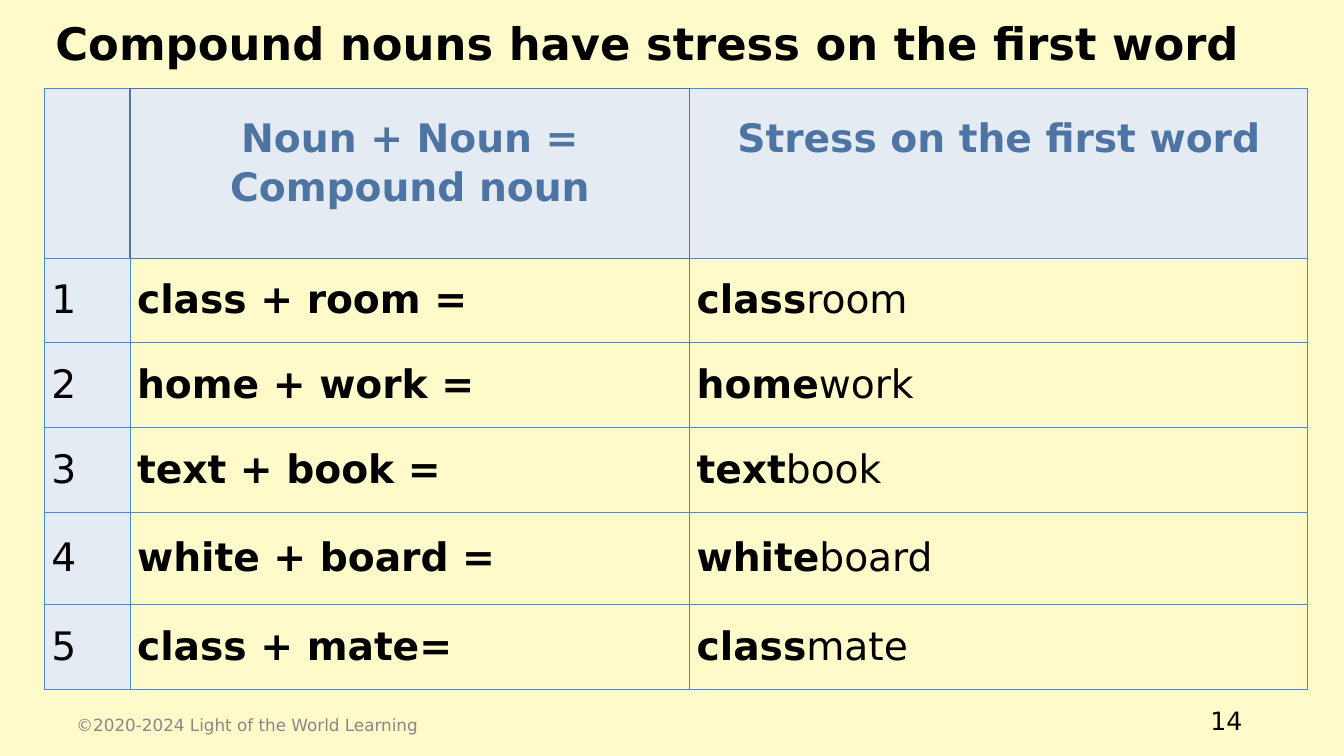
from dataclasses import dataclass

from lxml.etree import SubElement
from pptx import Presentation
from pptx.dml.color import RGBColor as Rgb
from pptx.enum.text import MSO_ANCHOR as Anchor, PP_ALIGN as Align
from pptx.oxml.ns import qn
from pptx.util import Emu, Pt

PX = 9144  # 100 px to the inch


@dataclass(frozen=True)
class Theme:
    font: str = "DejaVu Sans"
    paper: str = "FEFAC9"
    tint: str = "E4EBF2"
    ink: str = "000000"
    head: str = "4E74A3"
    line: str = "4A86E8"
    grey: str = "888888"
    title: int = 32
    body: int = 28
    page: int = 18
    foot: int = 12


class Deck:
    def __init__(self, theme, wide, high):
        self.theme = theme
        self.file = Presentation()
        self.file.slide_width, self.file.slide_height = Emu(wide * PX), Emu(high * PX)
        self.slide = self.file.slides.add_slide(self.file.slide_layouts[5])
        fill = self.slide.background.fill
        fill.solid()
        fill.fore_color.rgb = Rgb.from_string(theme.paper)

    def style(self, part, size, color, bold=False):
        """Format a run or a whole paragraph."""
        font = part.font
        font.name, font.size, font.bold = self.theme.font, Pt(size), bold
        font.color.rgb = Rgb.from_string(color)

    def fill_text(self, shape, text, size, color, align, anchor, bold=False):
        frame = shape.text_frame
        frame.word_wrap = True
        frame.vertical_anchor = anchor
        frame.text = text
        para = frame.paragraphs[0]
        para.alignment = align
        self.style(para.runs[0], size, color, bold)

    def title(self, text, box):
        shape = self.slide.shapes.title
        shape.left, shape.top, shape.width, shape.height = (Emu(n * PX) for n in box)
        self.fill_text(shape, text, self.theme.title, self.theme.ink,
                       Align.CENTER, Anchor.TOP, bold=True)

    def label(self, text, box, size, color, align):
        shape = self.slide.shapes.add_textbox(*(Emu(n * PX) for n in box))
        self.fill_text(shape, text, size, color, align, Anchor.MIDDLE)

    def table(self, left, top, cols, rows):
        grid = self.slide.shapes.add_table(
            len(rows), len(cols), Emu(left * PX), Emu(top * PX),
            Emu(sum(cols) * PX), Emu(sum(rows) * PX)).table
        for col, size in zip(grid.columns, cols):
            col.width = Emu(size * PX)
        for row, size in zip(grid.rows, rows):
            row.height = Emu(size * PX)
        return grid

    def cell(self, cell, parts, color, fill=None, edges=None, head=False):
        """Write (text, bold) parts; edges maps a side to (colour, points)."""
        cell.margin_left = cell.margin_right = Emu(7 * PX)
        cell.margin_top = Emu(24 * PX if head else 0)
        cell.margin_bottom = Emu(0)
        cell.vertical_anchor = Anchor.TOP if head else Anchor.MIDDLE
        para = cell.text_frame.paragraphs[0]
        if head:
            para.alignment, para.line_spacing = Align.CENTER, 1.07
        for text, bold in parts:
            run = para.add_run()
            run.text = text
            self.style(run, self.theme.body, color, bold)
        self.border(cell, edges or {})
        if fill:
            cell.fill.solid()
            cell.fill.fore_color.rgb = Rgb.from_string(fill)
        else:
            cell.fill.background()

    def border(self, cell, edges):
        props = cell._tc.get_or_add_tcPr()
        for side in "LRTB":
            color, width = edges.get(side, (self.theme.line, 0.75))
            line = SubElement(props, qn(f"a:ln{side}"), w=str(Pt(width)))
            solid = SubElement(line, qn("a:solidFill"))
            SubElement(solid, qn("a:srgbClr"), val=color)


HEADS = ["", "Noun + Noun = Compound noun", "Stress on the first word"]
WORDS = [
    ("class + room =", "class", "room"),
    ("home + work =", "home", "work"),
    ("text + book =", "text", "book"),
    ("white + board =", "white", "board"),
    ("class + mate=", "class", "mate"),
]


def main():
    look = Theme()
    deck = Deck(look, 1333, 750)
    deck.title("Compound nouns have stress on the first word", (-12, 11, 1309, 84))

    grid = deck.table(44, 88, [85, 555, 613], [168, 84, 84, 84, 92, 84])
    dark, blue = (look.head, 1), (look.line, 1)
    low = {"B": (look.head, 0.75)}
    edges = [
        {"L": blue, "T": blue, "R": dark},
        {"L": dark, "T": dark, "R": dark, **low},
        {"L": dark, "T": blue, "R": blue},
    ]
    for col, (text, edge) in enumerate(zip(HEADS, edges)):
        parts = [(text, True)] if text else []
        deck.cell(grid.cell(0, col), parts, look.head, look.tint, edge, head=True)

    for row, (pair, first, last) in enumerate(WORDS, 1):
        top = {"T": low["B"]} if row == 1 else None
        deck.cell(grid.cell(row, 0), [(str(row), False)], look.ink, look.tint)
        deck.cell(grid.cell(row, 1), [(pair, True)], look.ink, edges=top)
        deck.cell(grid.cell(row, 2), [(first, True), (last, False)], look.ink)

    deck.label("14", (942, 695, 300, 40), look.page, look.ink, Align.RIGHT)
    deck.label("©2020-2024 Light of the World Learning", (66, 699, 450, 40),
               look.foot, look.grey, Align.LEFT)
    deck.file.save("out.pptx")


if __name__ == "__main__":
    main()
